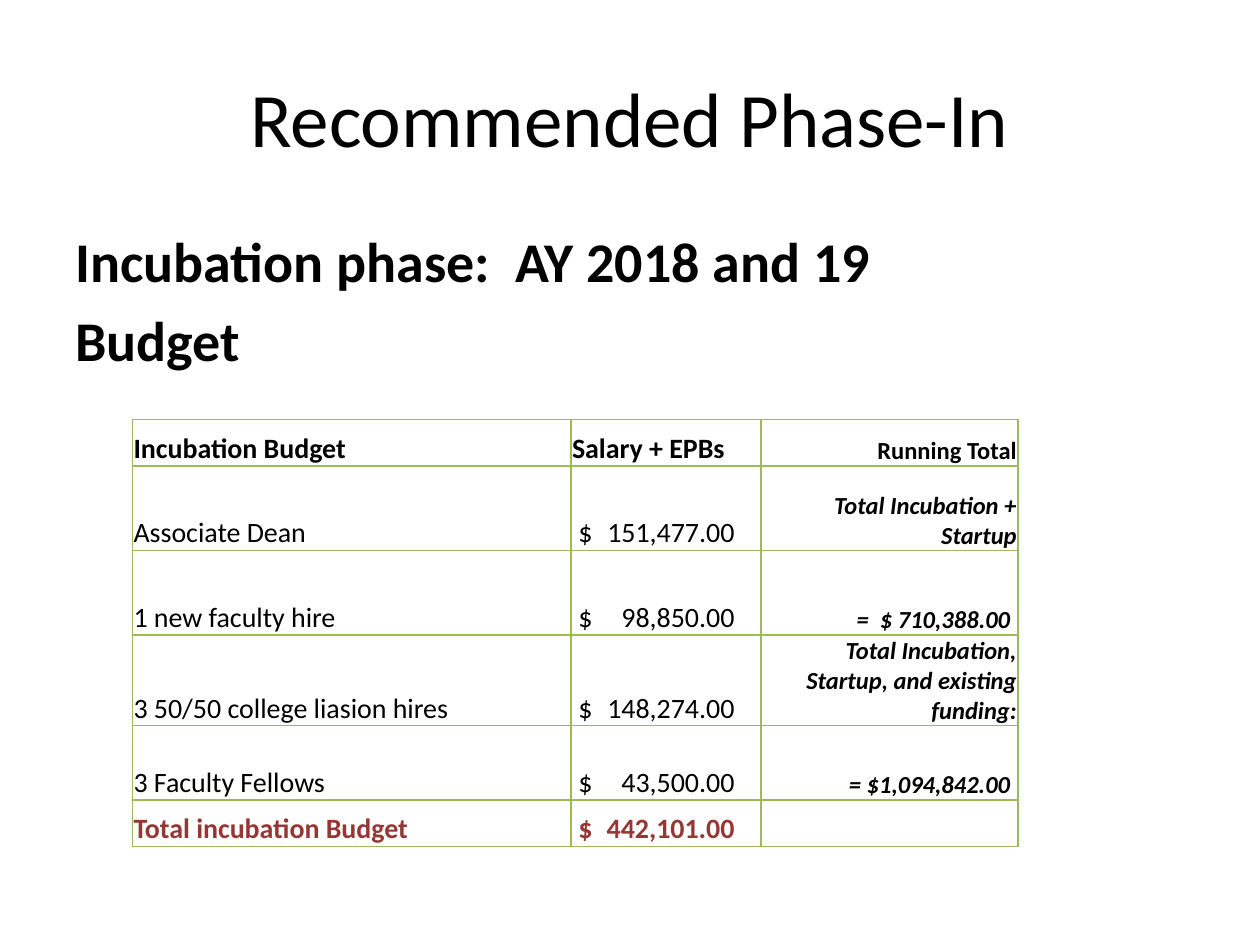
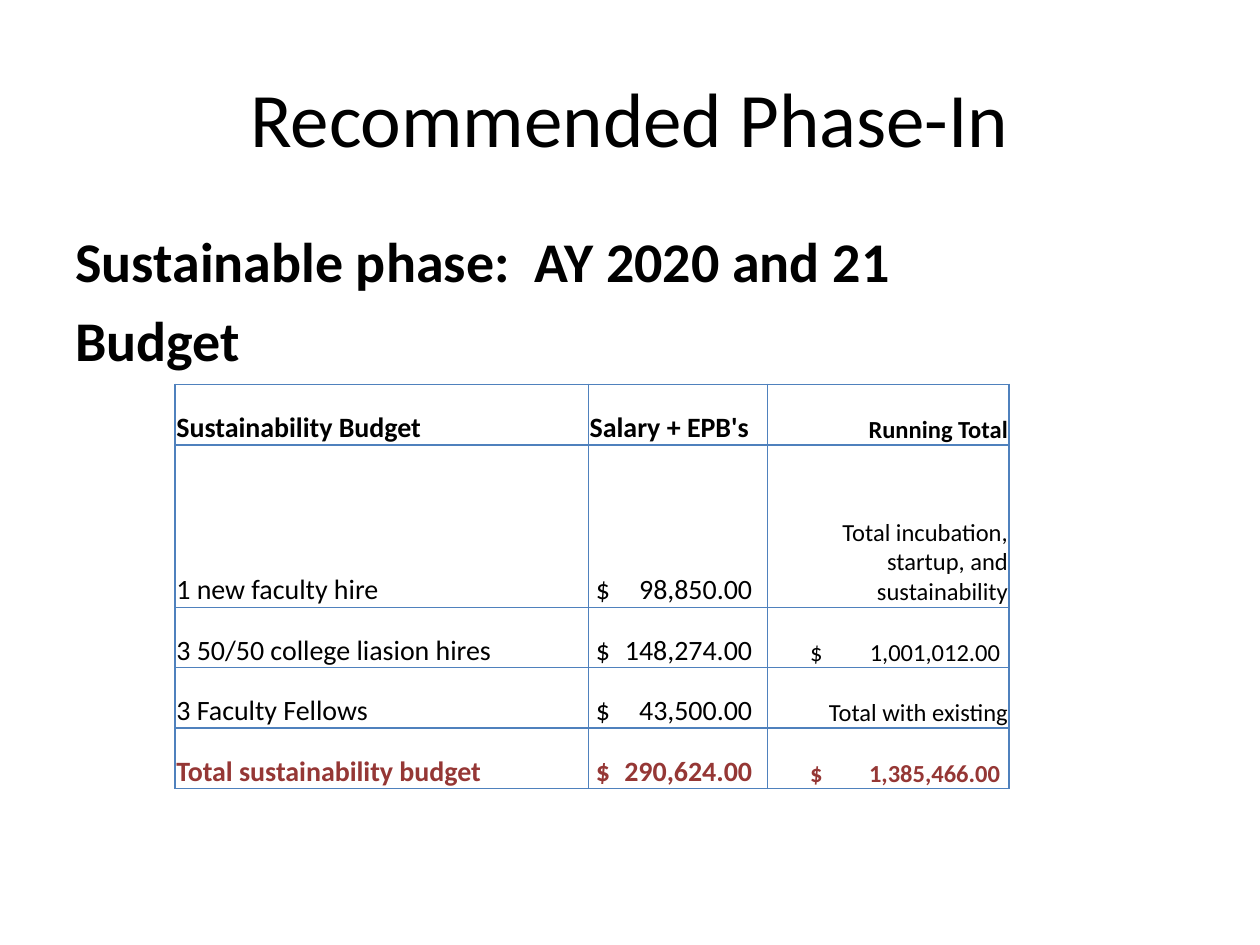
from dataclasses import dataclass

from lxml.etree import SubElement
from pptx import Presentation
from pptx.dml.color import RGBColor
from pptx.enum.text import MSO_ANCHOR as Anchor, PP_ALIGN as Align
from pptx.oxml import parse_xml
from pptx.oxml.ns import nsdecls, qn
from pptx.util import Inches, Pt


@dataclass(frozen=True)
class Theme:
    font: str = "Calibri"
    ink: str = "000000"
    total: str = "953735"
    green: str = "9BBB59"
    blue: str = "4F81BD"
    title: int = 44
    phase: int = 32
    entry: int = 16
    running: int = 14


@dataclass(frozen=True)
class BudgetRow:
    label: str
    amount: str
    running: str
    height: float


@dataclass(frozen=True)
class Phase:
    heading: str
    left: float
    top: float
    widths: tuple[float, ...]
    border: str
    running_emphasis: bool
    rows: tuple[BudgetRow, ...]


THEME = Theme()
CELL_INSET = 0.01
MONEY_INSET = 0.06
AMOUNT_TAB = 1.24
RUNNING_INSET = 0.34
RUNNING_TAB = 1.51

PHASES = (
    Phase(
        "Incubation phase:  AY 2018 and 19", 1.05, 3.33, (3.48, 1.51, 2.04),
        THEME.green, True,
        (
            BudgetRow("Incubation Budget", "Salary + EPBs", "Running Total", 0.37),
            BudgetRow("Associate Dean", "$\t151,477.00", "Total Incubation + Startup", 0.67),
            BudgetRow("1 new faculty hire", "$\t98,850.00", "=  $ 710,388.00", 0.67),
            BudgetRow("3 50/50 college liasion hires", "$\t148,274.00",
                      "Total Incubation, Startup, and existing funding:", 0.72),
            BudgetRow("3 Faculty Fellows", "$\t43,500.00", "= $1,094,842.00", 0.59),
            BudgetRow("Total incubation Budget", "$\t442,101.00", "", 0.37),
        ),
    ),
    Phase(
        "Sustainable phase:  AY 2020 and 21", 1.39, 3.05, (3.28, 1.42, 1.92),
        THEME.blue, False,
        (
            BudgetRow("Sustainability Budget", "Salary + EPB's", "Running Total", 0.48),
            BudgetRow("1 new faculty hire", "$\t98,850.00",
                      "Total incubation, startup, and sustainability", 1.29),
            BudgetRow("3 50/50 college liasion hires", "$\t148,274.00", "$\t1,001,012.00", 0.48),
            BudgetRow("3 Faculty Fellows", "$\t43,500.00", "Total with existing", 0.48),
            BudgetRow("Total sustainability budget", "$\t290,624.00", "$\t1,385,466.00", 0.48),
        ),
    ),
)


def write(paragraph, text: str, *, size: int, color: str = THEME.ink, bold: bool = False,
          italic: bool = False, align=Align.LEFT, before: float = 0, tab: float = 0) -> None:
    paragraph.alignment = align
    paragraph.space_before = Pt(before)
    if tab:
        stops = SubElement(paragraph._p.get_or_add_pPr(), qn("a:tabLst"))
        SubElement(stops, qn("a:tab"), pos=str(Inches(tab)), algn="r")
    run = paragraph.add_run()
    run.text = text
    font = run.font
    font.name, font.size, font.bold, font.italic = THEME.font, Pt(size), bold, italic
    font.color.rgb = RGBColor.from_string(color)


def add_frame(slide, top: float, height: float, anchor):
    frame = slide.shapes.add_textbox(Inches(0.5), Inches(top), Inches(9), Inches(height)).text_frame
    frame.word_wrap = True
    frame.vertical_anchor = anchor
    return frame


def prepare_cell(cell, border: str) -> None:
    cell.vertical_anchor = Anchor.BOTTOM
    cell.margin_left = cell.margin_right = cell.margin_top = Inches(CELL_INSET)
    cell.margin_bottom = 0
    cell.fill.background()
    properties = cell._tc.get_or_add_tcPr()
    for position, side in enumerate(("lnL", "lnR", "lnT", "lnB")):
        properties.insert(position, parse_xml(
            f'<a:{side} {nsdecls("a")} w="{Pt(1)}"><a:solidFill>'
            f'<a:srgbClr val="{border}"/></a:solidFill></a:{side}>'))


def write_amount(cell, text: str, **style) -> None:
    tab = 0
    if "\t" in text:
        cell.margin_left = Inches(MONEY_INSET)
        tab = AMOUNT_TAB
    write(cell.text_frame.paragraphs[0], text, size=THEME.entry, tab=tab, **style)


def write_running(cell, text: str, **style) -> None:
    align, tab = Align.RIGHT, 0
    if "$" in text:
        cell.margin_right = Inches(MONEY_INSET)
    if "\t" in text:
        cell.margin_left = Inches(RUNNING_INSET)
        align, tab = Align.LEFT, RUNNING_TAB
    write(cell.text_frame.paragraphs[0], text, size=THEME.running, align=align, tab=tab, **style)


def add_budget(slide, phase: Phase) -> None:
    height = sum(row.height for row in phase.rows)
    budget = slide.shapes.add_table(
        len(phase.rows), len(phase.widths), Inches(phase.left), Inches(phase.top),
        Inches(sum(phase.widths)), Inches(height)).table
    budget.first_row = budget.horz_banding = False
    for column, width in zip(budget.columns, phase.widths):
        column.width = Inches(width)
    for index, entry in enumerate(phase.rows):
        budget.rows[index].height = Inches(entry.height)
        is_header, is_total = index == 0, index == len(phase.rows) - 1
        strong = is_header or is_total
        color = THEME.total if is_total else THEME.ink
        label, amount, running = budget.rows[index].cells
        for cell in (label, amount, running):
            prepare_cell(cell, phase.border)
        write(label.text_frame.paragraphs[0], entry.label, size=THEME.entry,
              color=color, bold=strong)
        write_amount(amount, entry.amount, color=color, bold=strong)
        if entry.running:
            write_running(running, entry.running, color=color,
                          bold=strong or phase.running_emphasis,
                          italic=phase.running_emphasis and not strong)


def add_phase(deck, phase: Phase) -> None:
    slide = deck.slides.add_slide(deck.slide_layouts[6])
    title = add_frame(slide, 0.3, 1.25, Anchor.MIDDLE)
    write(title.paragraphs[0], "Recommended Phase-In", size=THEME.title, align=Align.CENTER)
    body = add_frame(slide, 1.75, 4.95, Anchor.TOP)
    for paragraph, text in ((body.paragraphs[0], phase.heading), (body.add_paragraph(), "Budget")):
        write(paragraph, text, size=THEME.phase, bold=True, before=THEME.phase * 0.2)
    add_budget(slide, phase)


def main() -> None:
    deck = Presentation()
    deck.slide_width, deck.slide_height = Inches(10), Inches(7.5)
    for phase in PHASES:
        add_phase(deck, phase)
    deck.save("out.pptx")


if __name__ == "__main__":
    main()
